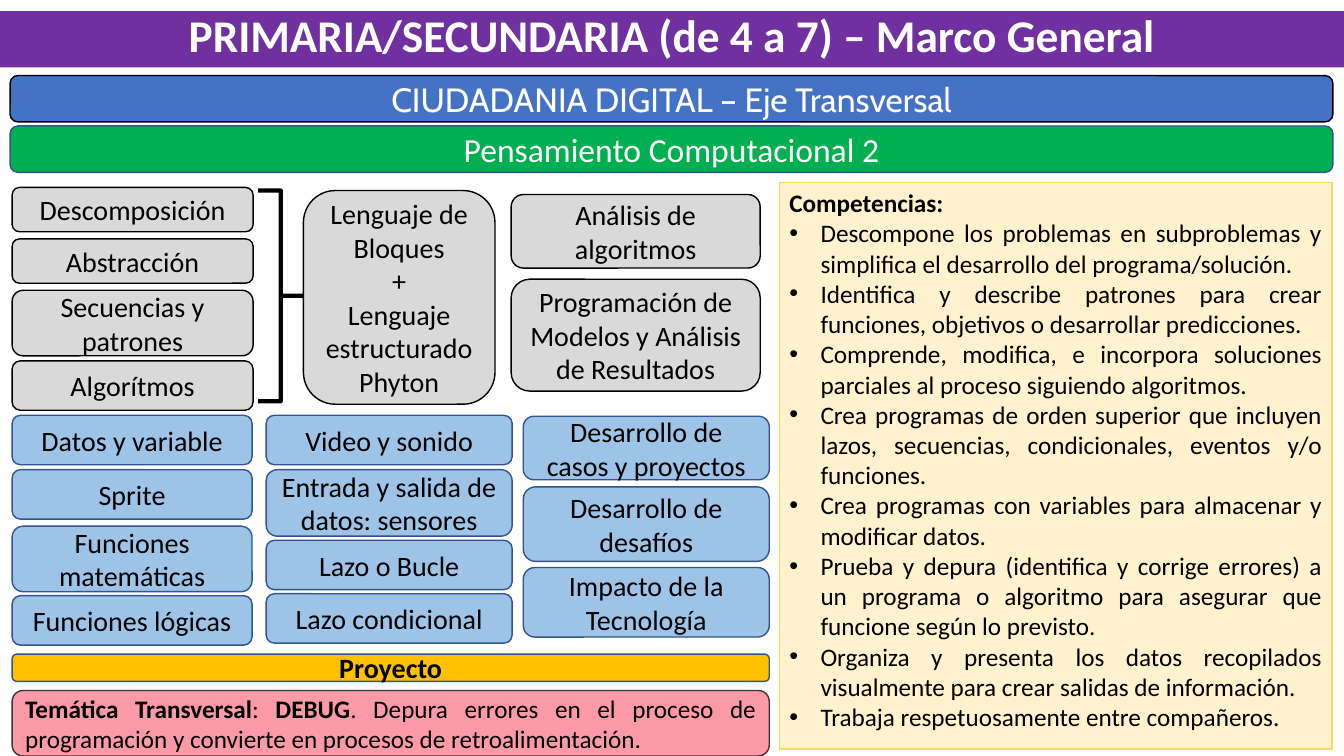
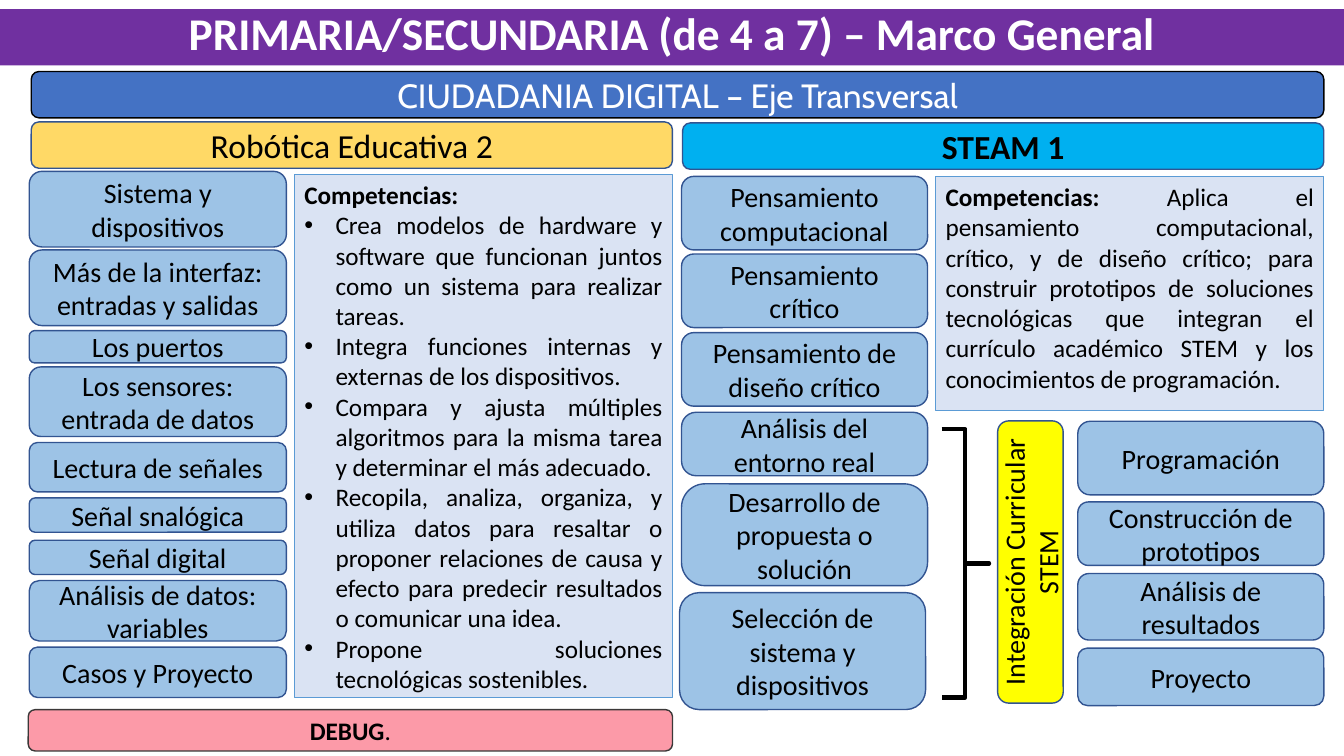
from lxml import etree
from pptx import Presentation
from pptx.dml.color import RGBColor
from pptx.enum.shapes import MSO_SHAPE as Shape
from pptx.enum.text import MSO_ANCHOR as Anchor, MSO_AUTO_SIZE as AutoSize, PP_ALIGN as Align
from pptx.oxml.ns import qn
from pptx.util import Pt

PX = 9144  # EMU per px, 100 px to the inch
WIDTH, HEIGHT = 1333, 750
TITLE_ONLY = 5
INDENT = 31
BODY_FONT, AXIS_FONT = "Calibri", "Cabin"
COLORS = {
    "white": "FFFFFF", "black": "000000", "purple": "7030A0", "navy": "325491",
    "blue": "4472C4", "green": "00B050", "cyan": "00B0F0", "gold": "FFD966",
    "orange": "FFC000", "yellow": "FFFF00", "cream": "FFF2CC", "gray": "D9D9D9",
    "sky": "9DC3E6", "pale": "DAE3F3", "edge": "5B9BD5", "pink": "FC9AA8",
    "charcoal": "3B3838",
}


def color(name):
    return RGBColor.from_string(COLORS[name])


class Deck:
    """Holds the shared style and the current slide."""

    def __init__(self):
        self.show = Presentation()
        self.show.slide_width, self.show.slide_height = WIDTH * PX, HEIGHT * PX
        self.slide = None

    def new_slide(self, title, top):
        self.slide = self.show.slides.add_slide(self.show.slide_layouts[TITLE_ONLY])
        band = self.slide.shapes.title
        band.left, band.top, band.width, band.height = 0, top * PX, WIDTH * PX, 56 * PX
        band.fill.solid()
        band.fill.fore_color.rgb = color("purple")
        frame = band.text_frame
        frame.auto_size, frame.vertical_anchor = AutoSize.NONE, Anchor.MIDDLE
        frame.paragraphs[0].line_spacing = 0.8
        self.set_text(frame.paragraphs[0], title, 32.4, "white", Align.CENTER, bold=True)

    def set_text(self, paragraph, text, size, ink, align, bold=False, font=BODY_FONT):
        """Fill a paragraph from a string or from (text, bold) pairs."""
        paragraph.alignment = align
        style = paragraph.font
        style.size, style.name, style.color.rgb = Pt(size), font, color(ink)
        if isinstance(text, str):
            style.bold = bold
            paragraph.add_run().text = text
            return
        for words, strong in text:
            run = paragraph.add_run()
            run.text, run.font.bold = words, strong

    def bullet(self, paragraph):
        props = paragraph._p.get_or_add_pPr()
        props.set("marL", str(INDENT * PX))
        props.set("indent", str(-INDENT * PX))
        etree.SubElement(props, qn("a:buFont")).set("typeface", "Arial")
        etree.SubElement(props, qn("a:buChar")).set("char", "•")

    def shape(self, kind, box, fill, line, weight=1):
        item = self.slide.shapes.add_shape(kind, *(n * PX for n in box))
        item.shadow.inherit = False
        if fill:
            item.fill.solid()
            item.fill.fore_color.rgb = color(fill)
        else:
            item.fill.background()
        item.line.color.rgb, item.line.width = color(line), Pt(weight)
        return item

    def box(self, bounds, *lines, fill="sky", line="navy", size=20, ink="black",
            align=Align.CENTER, turn=0, corner=None, **style):
        """Rounded box with one paragraph per line."""
        item = self.shape(Shape.ROUNDED_RECTANGLE, bounds, fill, line)
        item.rotation = turn
        if corner:
            item.adjustments[0] = corner
        frame = item.text_frame
        frame.word_wrap, frame.vertical_anchor = True, Anchor.MIDDLE
        for i, text in enumerate(lines):
            paragraph = frame.add_paragraph() if i else frame.paragraphs[0]
            self.set_text(paragraph, text, size, ink, align, **style)

    def column(self, left, width, rows, **style):
        """Stack of boxes; each row is top, height and its lines."""
        for top, height, *lines in rows:
            self.box((left, top, width, height), *lines, **style)

    def axis(self, left, top, width):
        self.box((left, top, width, 46), "CIUDADANIA DIGITAL – Eje Transversal",
                 fill="blue", line="black", size=24, ink="white", font=AXIS_FONT)

    def skills(self, bounds, heading, bullets=(), fill="pale", line="edge"):
        """Panel with the heading and its bulleted competences."""
        frame = self.shape(Shape.RECTANGLE, bounds, fill, line).text_frame
        frame.word_wrap, frame.vertical_anchor = True, Anchor.TOP
        align = Align.LEFT if bullets else Align.JUSTIFY
        self.set_text(frame.paragraphs[0], heading, 18, "black", align)
        for text in bullets:
            paragraph = frame.add_paragraph()
            self.bullet(paragraph)
            self.set_text(paragraph, text, 18, "black", Align.JUSTIFY)

    def theme_note(self, bounds, text, align):
        self.box(bounds, text, fill="pink", line="charcoal", size=18, align=align)

    def bracket(self, bounds):
        brace = self.shape(Shape.RIGHT_BRACE, bounds, None, "black", 3)
        brace.adjustments[0], brace.adjustments[1] = 0, 0.5


TITLE = "PRIMARIA/SECUNDARIA (de 4 a 7) – Marco General"
HEADING = ("Competencias:", True)


def computational_thinking(deck):
    deck.new_slide(TITLE, 11)
    deck.axis(10, 75, 1312)
    deck.box((10, 125, 1312, 46), "Pensamiento Computacional 2",
             fill="green", size=24, ink="white")
    deck.skills((773, 181, 548, 562), [HEADING], [
        "Descompone los problemas en subproblemas y simplifica el desarrollo del programa/solución.",
        "Identifica y describe patrones para crear funciones, objetivos o desarrollar predicciones.",
        "Comprende, modifica, e incorpora soluciones parciales al proceso siguiendo algoritmos.",
        "Crea programas de orden superior que incluyen lazos, secuencias, condicionales, "
        "eventos y/o funciones.",
        "Crea programas con variables para almacenar y modificar datos.",
        "Prueba y depura (identifica y corrige errores) a un programa o algoritmo para "
        "asegurar que funcione según lo previsto.",
        "Organiza y presenta los datos recopilados visualmente para crear salidas de información.",
        "Trabaja respetuosamente entre compañeros.",
    ], fill="cream", line="gold")

    # Thinking skills leading to languages
    thinking = {"fill": "gray", "line": "black"}
    deck.column(12, 239, [
        (186, 44, "Descomposición"),
        (237, 44, "Abstracción"),
        (288, 65, "Secuencias y patrones"),
        (358, 49, "Algorítmos"),
    ], **thinking)
    deck.bracket((256, 189, 45, 209))
    deck.box((301, 189, 190, 212), "Lenguaje de Bloques", "+",
             "Lenguaje estructurado", "Phyton", **thinking)
    deck.column(507, 247, [
        (193, 73, "Análisis de algoritmos"),
        (277, 111, "Programación de Modelos y Análisis de Resultados"),
    ], **thinking)

    # Programming contents
    deck.column(12, 238, [
        (412, 49, "Datos y variable"),
        (466, 49, "Sprite"),
        (522, 65, "Funciones matemáticas"),
        (591, 49, "Funciones lógicas"),
    ])
    deck.column(264, 244, [
        (412, 49, "Video y sonido"),
        (466, 66, "Entrada y salida de datos: sensores"),
        (536, 49, "Lazo o Bucle"),
        (589, 49, "Lazo condicional"),
    ])
    deck.column(519, 244, [
        (413, 63, "Desarrollo de casos y proyectos"),
        (483, 74, "Desarrollo de desafíos"),
        (563, 69, "Impacto de la Tecnología"),
    ])

    # Project and cross-cutting theme
    deck.box((12, 649, 751, 27), "Proyecto", fill="orange", bold=True)
    deck.theme_note((12, 685, 751, 65), [
        ("Temática Transversal", True), (": ", False), ("DEBUG", True),
        (". Depura errores en el proceso de programación y convierte en procesos "
         "de retroalimentación.", False),
    ], Align.JUSTIFY)


def robotics_and_steam(deck):
    deck.new_slide(TITLE, 9)
    deck.axis(31, 71, 1282)

    # Robotics half
    deck.box((31, 121, 636, 46), "Robótica Educativa 2", fill="gold", size=24)
    deck.skills((292, 173, 375, 519), [HEADING], [
        "Crea modelos de hardware y software que funcionan juntos como un sistema "
        "para realizar tareas.",
        "Integra funciones internas y externas de los dispositivos.",
        "Compara y ajusta múltiples algoritmos para la misma tarea y determinar el más adecuado.",
        "Recopila, analiza, organiza, y utiliza datos para resaltar o proponer relaciones "
        "de causa y efecto para predecir resultados o comunicar una idea.",
        "Propone soluciones tecnológicas sostenibles.",
    ])
    deck.column(29, 255, [
        (170, 75, "Sistema y dispositivos"),
        (248, 75, "Más de la interfaz:", "entradas y salidas"),
        (328, 32, "Los puertos"),
        (364, 69, "Los sensores: entrada de datos"),
        (439, 49, "Lectura de señales"),
        (494, 34, "Señal snalógica"),
        (536, 34, "Señal digital"),
        (576, 60, "Análisis de datos: variables"),
        (642, 50, "Casos y Proyecto"),
    ])
    deck.theme_note((28, 704, 639, 41), [("DEBUG", True), (".", False)], Align.CENTER)

    # STEAM half
    deck.box((677, 122, 636, 46), "STEAM 1", fill="cyan", size=24, bold=True)
    deck.skills((928, 175, 385, 232), [HEADING, (
        " Aplica el pensamiento computacional, crítico, y de diseño crítico; para construir "
        "prototipos de soluciones tecnológicas que integran el currículo académico STEM "
        "y los conocimientos de programación.", False)])
    deck.column(676, 244, [
        (175, 73, "Pensamiento computacional"),
        (252, 73, "Pensamiento crítico"),
        (330, 73, "Pensamiento de diseño crítico"),
    ])
    deck.column(676, 244, [
        (409, 63, "Análisis del entorno real"),
        (480, 101, "Desarrollo de propuesta o solución"),
    ], corner=0.23)
    deck.box((674, 588, 244, 116), "Selección de sistema y dispositivos")

    # Curricular integration
    deck.bracket((934, 426, 47, 266))
    deck.box((882, 525, 280, 65), "Integración Curricular STEM", fill="yellow", turn=270)
    deck.column(1069, 244, [
        (418, 73, "Programación"),
        (498, 63, "Construcción de prototipos"),
        (569, 66, "Análisis de resultados"),
        (643, 57, "Proyecto"),
    ])


def main():
    deck = Deck()
    computational_thinking(deck)
    robotics_and_steam(deck)
    deck.show.save("out.pptx")


if __name__ == "__main__":
    main()
